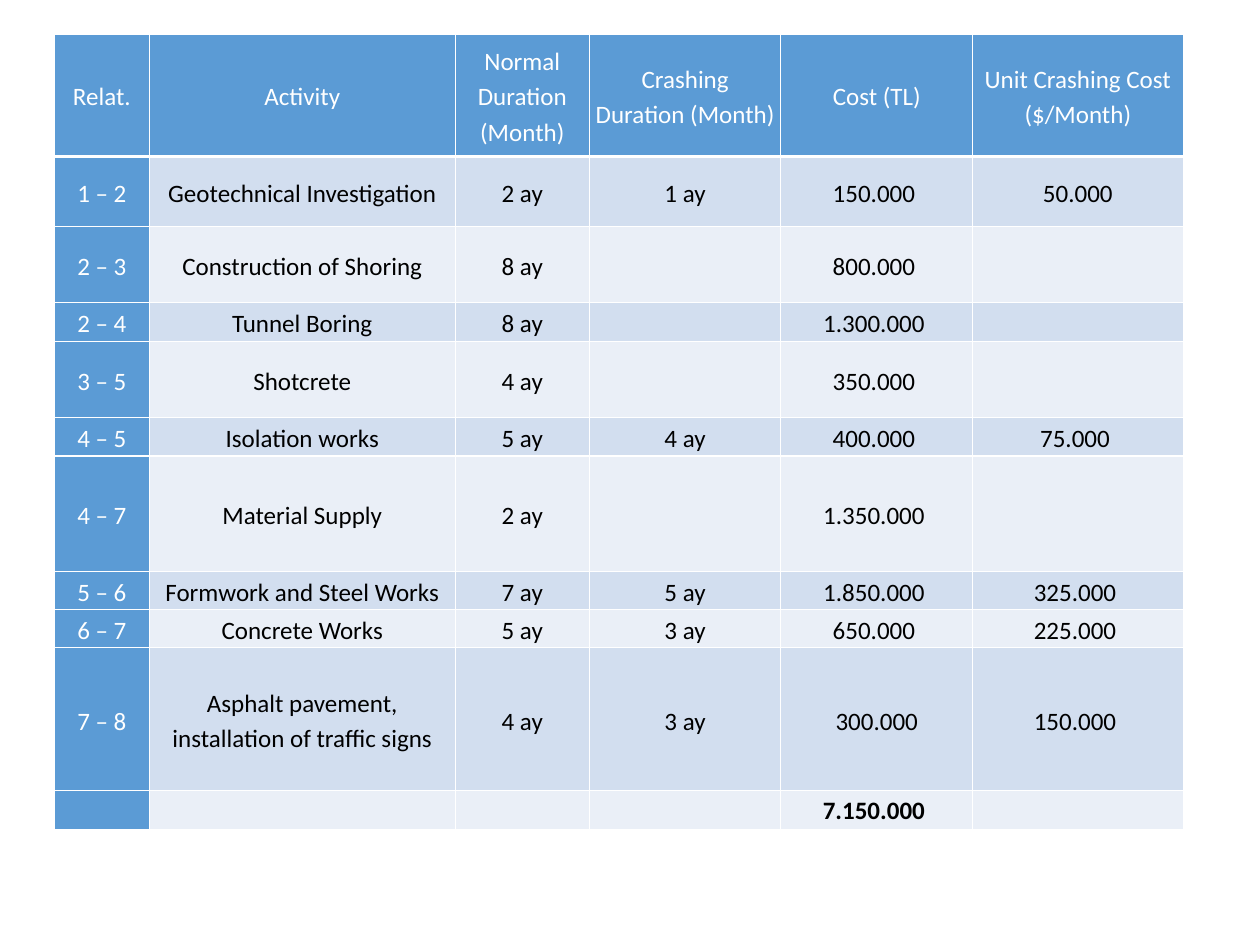
"""Build a slide with the table of activity durations and crashing costs."""
from lxml import etree
from pptx import Presentation
from pptx.dml.color import RGBColor
from pptx.enum import text as t
from pptx.oxml import ns
from pptx.util import Cm, Pt

WHITE = RGBColor(0xFF, 0xFF, 0xFF)
BLACK = RGBColor(0, 0, 0)
BLUE = RGBColor(0x5B, 0x9B, 0xD5)
BANDS = [RGBColor(0xEA, 0xEF, 0xF7), RGBColor(0xD2, 0xDE, 0xEF)]

ACTIVITIES = [
    ["Relat.", "Activity", "Normal Duration (Month)", "Crashing Duration (Month)",
     "Cost (TL)", "Unit Crashing Cost ($/Month)"],
    ["1 – 2", "Geotechnical Investigation", "2 ay", "1 ay", "150.000 ", "50.000"],
    ["2 – 3", "Construction of Shoring", "8 ay", "", "800.000 ", ""],
    ["2 – 4", "Tunnel Boring", "8 ay", "", "1.300.000 ", ""],
    ["3 – 5", "Shotcrete", "4 ay", "", "350.000 ", ""],
    ["4 – 5", "Isolation works", "5 ay", "4 ay", "400.000 ", "75.000 "],
    ["4 – 7", "Material Supply", "2 ay", "", "1.350.000 ", ""],
    ["5 – 6", "Formwork and Steel Works", "7 ay", "5 ay", "1.850.000 ", "325.000 "],
    ["6 – 7", "Concrete Works", "5 ay", "3 ay", "650.000 ", "225.000 "],
    ["7 – 8", "Asphalt pavement, installation of traffic signs", "4 ay", "3 ay",
     "300.000", "150.000 "],
    ["", "", "", "", "7.150.000 ", ""],
]
WIDTHS = [2.67, 8.64, 3.78, 5.41, 5.41, 5.94]
HEIGHTS = [3.45, 1.98, 2.16, 1.08, 2.16, 1.08, 3.25, 1.08, 1.08, 4.04, 1.08]


def write(cell, words, color=BLACK, bold=False, anchor=t.MSO_ANCHOR.MIDDLE):
    cell.margin_left = cell.margin_right = Cm(0.18)
    cell.margin_top = cell.margin_bottom = 0
    cell.vertical_anchor = anchor
    paragraph = cell.text_frame.paragraphs[0]
    paragraph.alignment = t.PP_ALIGN.CENTER
    paragraph.line_spacing = 1.15
    paragraph.space_after = Pt(10)
    run = paragraph.add_run()
    run.text = words
    run.font.name = "Calibri"
    run.font.size = Pt(20)
    run.font.bold = bold
    run.font.color.rgb = color


def draw_border(cell, side, points):
    line = etree.SubElement(cell._tc.get_or_add_tcPr(), ns.qn(f"a:ln{side}"), w=str(Pt(points)))
    fill = etree.SubElement(line, ns.qn("a:solidFill"))
    etree.SubElement(fill, ns.qn("a:srgbClr"), val=str(WHITE))


prs = Presentation()
prs.slide_width, prs.slide_height = Cm(35.56), Cm(26.67)
slide = prs.slides.add_slide(prs.slide_layouts[6])
costs = slide.shapes.add_table(
    len(HEIGHTS), len(WIDTHS), Cm(1.54), Cm(0.96), Cm(sum(WIDTHS)), Cm(sum(HEIGHTS))
).table

for column, width in zip(costs.columns, WIDTHS):
    column.width = Cm(width)

total_row = len(ACTIVITIES) - 1
for r, (activity, height) in enumerate(zip(ACTIVITIES, HEIGHTS)):
    costs.rows[r].height = Cm(height)
    for c, words in enumerate(activity):
        cell = costs.cell(r, c)
        heading = r == 0 or c == 0
        for side in "LRTB":
            under_header = (r, side) in [(0, "B"), (1, "T")]
            draw_border(cell, side, 3 if under_header else 1)
        cell.fill.solid()
        cell.fill.fore_color.rgb = BLUE if heading else BANDS[r % 2]
        if words:
            is_total = r == total_row
            write(cell, words, color=WHITE if heading else BLACK, bold=is_total,
                  anchor=t.MSO_ANCHOR.TOP if is_total else t.MSO_ANCHOR.MIDDLE)

prs.save("out.pptx")
